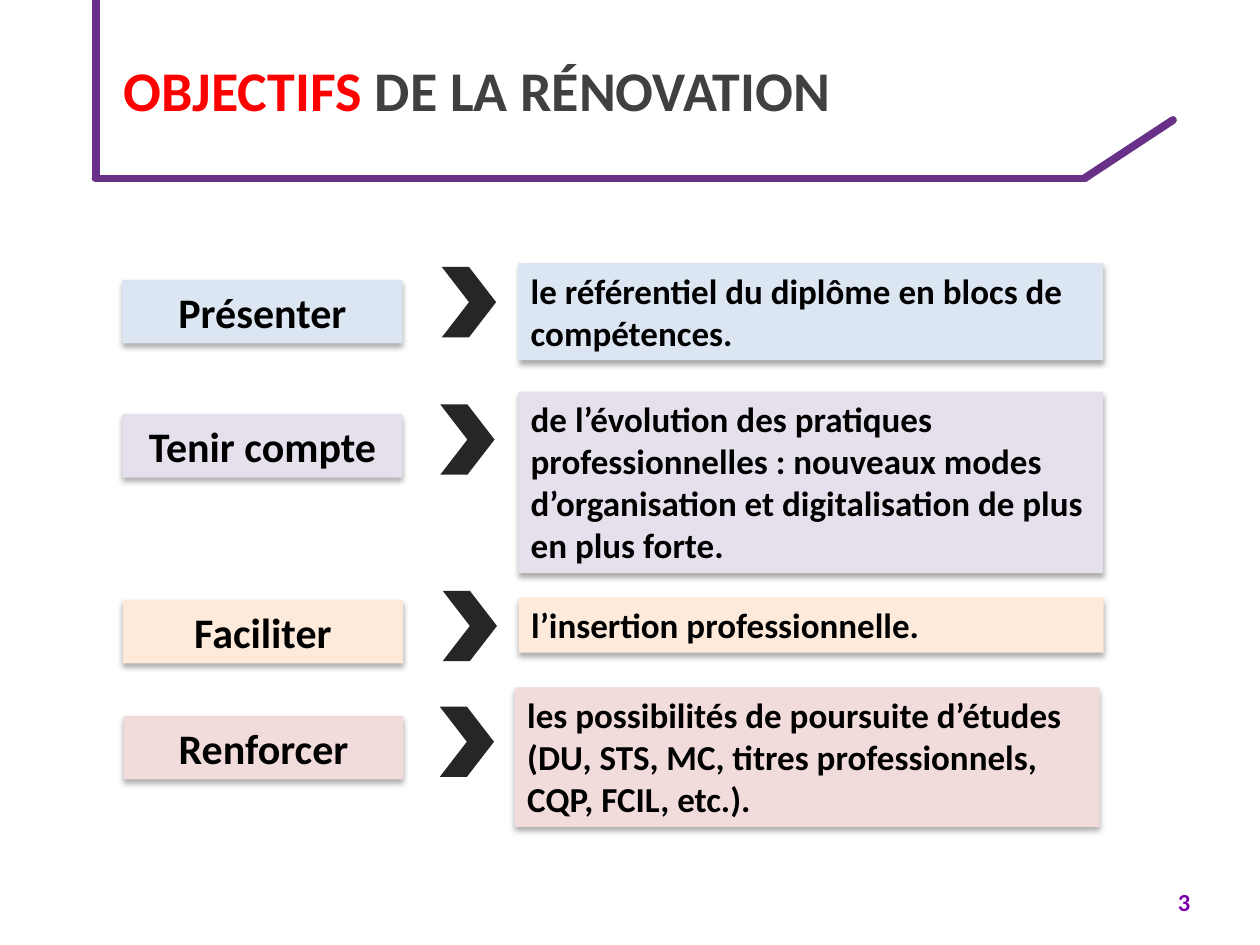
from lxml import etree
from pptx import Presentation
from pptx.dml.color import RGBColor
from pptx.enum.shapes import MSO_CONNECTOR, MSO_SHAPE
from pptx.enum.text import MSO_ANCHOR, MSO_AUTO_SIZE, PP_ALIGN
from pptx.oxml.ns import qn
from pptx.util import Pt

STRAIGHT = MSO_CONNECTOR.STRAIGHT
RECTANGLE, CHEVRON = MSO_SHAPE.RECTANGLE, MSO_SHAPE.CHEVRON
LEFT, CENTER = PP_ALIGN.LEFT, PP_ALIGN.CENTER
MIDDLE, TOP = MSO_ANCHOR.MIDDLE, MSO_ANCHOR.TOP
FIT_SHAPE, NO_FIT = MSO_AUTO_SIZE.SHAPE_TO_FIT_TEXT, MSO_AUTO_SIZE.NONE

THEME = {
    "font": "Calibri",
    "sizes": {"title": 32, "verb": 24, "goal": 20, "number": 14},
    "frame": "683086",
    "accent": "FF0000",
    "title": "404040",
    "text": "000000",
    "arrow": "262626",
    "number": "7B00AC",
    "blue": "DCE6F2",
    "purple": "E6E0EC",
    "orange": "FDEADA",
    "red": "F2DCDB",
}

TITLE = [("OBJECTIFS", "accent"), (" DE LA RÉNOVATION", "title")]
PAGE_NUMBER = "3"
FRAME_LINES = [
    ((54.7, 102), (620, 102)),
    ((620, 101.7), (670.3, 68.6)),
    ((54.7, 101.7), (54.7, 0)),
]

VERB_SIZE = (160, 36.3)
ARROW_SIZE = (31, 40.2)
GOAL_WIDTH = 334.2
GOAL_LINE, GOAL_PADDING = 24.1, 7.4
OBJECTIVES = [
    {"verb": "Présenter", "fill": "blue", "lines": 2,
     "goal": "le référentiel du diplôme en blocs de compétences.",
     "verb_at": (70, 160), "arrow_at": (252.5, 152.6), "goal_at": (296.2, 150.3)},
    {"verb": "Tenir compte", "fill": "purple", "lines": 4,
     "goal": "de l’évolution des pratiques professionnelles : nouveaux modes "
             "d’organisation et digitalisation de plus en plus forte.",
     "verb_at": (70, 236.6), "arrow_at": (251.6, 231.1), "goal_at": (296.2, 223.8)},
    {"verb": "Faciliter", "fill": "orange", "lines": 1,
     "goal": "l’insertion professionnelle.",
     "verb_at": (70.3, 342.8), "arrow_at": (253, 337.6), "goal_at": (296.5, 341.4)},
    {"verb": "Renforcer", "fill": "red", "lines": 3,
     "goal": "les possibilités de poursuite d’études (DU, STS, MC, titres "
             "professionnels, CQP, FCIL, etc.).",
     "verb_at": (70.6, 409.1), "arrow_at": (251.3, 403.8), "goal_at": (294.2, 392.8)},
]


def colour(name):
    return RGBColor.from_string(THEME[name])


def points(*values):
    return [Pt(value) for value in values]


def write(box, spans, size, align=LEFT, anchor=TOP, fit=NO_FIT):
    frame = box.text_frame
    frame.word_wrap = True
    frame.auto_size = fit
    frame.vertical_anchor = anchor
    para = frame.paragraphs[0]
    para.alignment = align
    for text, name in spans:
        span = para.add_run()
        span.text = text
        span.font.name = THEME["font"]
        span.font.size = Pt(THEME["sizes"][size])
        span.font.bold = True
        span.font.color.rgb = colour(name)
    return para


def add_filled(page, preset, place, size, fill):
    shape = page.shapes.add_shape(preset, *points(*place, *size))
    shape.shadow.inherit = False
    shape.fill.solid()
    shape.fill.fore_color.rgb = colour(fill)
    shape.line.fill.background()
    return shape


def add_shadow(shape):
    effects = shape.element.spPr.find(qn("a:effectLst"))
    shadow = etree.SubElement(
        effects, qn("a:outerShdw"), blurRad=str(Pt(3.5)), dist=str(Pt(2.2)),
        dir="5400000", rotWithShape="0")
    tint = etree.SubElement(shadow, qn("a:srgbClr"), val=THEME["text"])
    etree.SubElement(tint, qn("a:alpha"), val="32000")


def add_card(page, place, size, fill, text, style, align):
    card = add_filled(page, RECTANGLE, place, size, fill)
    add_shadow(card)
    write(card, [(text, "text")], style, align, fit=FIT_SHAPE)


def add_frame_line(page, start, end):
    line = page.shapes.add_connector(STRAIGHT, *points(*start, *end))
    line.line.color.rgb = colour("frame")
    line.line.width = Pt(4.5)
    line.get_or_add_ln().set("cap", "rnd")
    etree.SubElement(line.element.spPr, qn("a:effectLst"))


def main():
    deck = Presentation()
    deck.slide_width, deck.slide_height = points(720, 540)
    page = deck.slides.add_slide(deck.slide_layouts[5])

    for start, end in FRAME_LINES:
        add_frame_line(page, start, end)

    title = page.shapes.title
    title.left, title.top, title.width, title.height = points(63.4, 0, 620.6, 101.5)
    write(title, TITLE, "title", anchor=MIDDLE)

    for item in OBJECTIVES:
        goal_size = (GOAL_WIDTH, GOAL_PADDING + item["lines"] * GOAL_LINE)
        add_card(page, item["verb_at"], VERB_SIZE, item["fill"], item["verb"], "verb", CENTER)
        add_filled(page, CHEVRON, item["arrow_at"], ARROW_SIZE, "arrow")
        add_card(page, item["goal_at"], goal_size, item["fill"], item["goal"], "goal", LEFT)

    number = page.shapes.add_textbox(*points(666, 503.3, 48.2, 28.8))
    para = write(number, [(PAGE_NUMBER, "number")], "number")
    para.space_after = Pt(6)

    deck.save("out.pptx")


if __name__ == "__main__":
    main()
